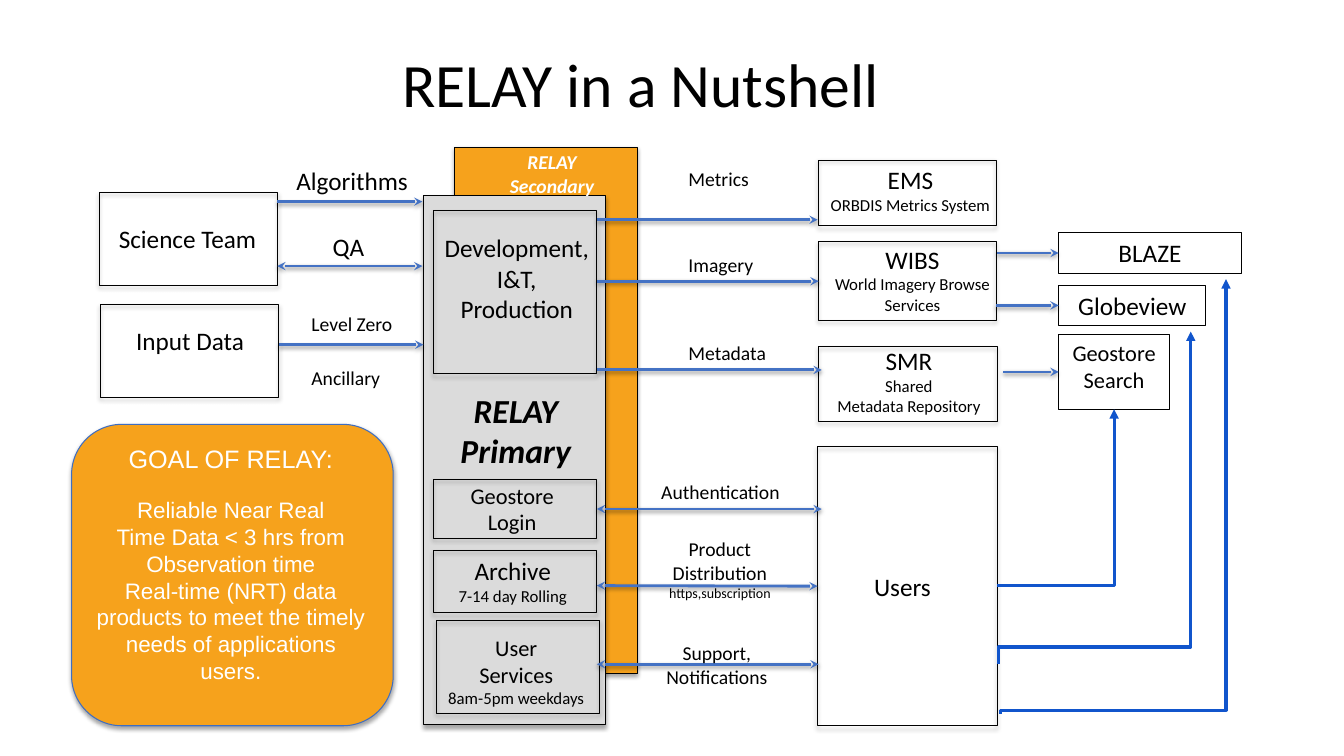
from dataclasses import dataclass

from lxml import etree
from pptx import Presentation
from pptx.dml.color import RGBColor
from pptx.enum import shapes, text
from pptx.oxml import ns
from pptx.util import Inches, Pt


@dataclass(frozen=True)
class Theme:
    ink: str = "000000"
    white: str = "FFFFFF"
    gold: str = "F6A21C"
    grey: str = "DBDBDB"
    rim: str = "3E6EC2"
    flow: str = "4472C4"
    route: str = "1155CC"
    font: str = "Calibri"
    plain: str = "Arial"
    title: int = 44
    head: int = 24
    big: int = 18
    mid: int = 16
    note: int = 14
    small: int = 12
    tiny: int = 10


theme = Theme()
rgb = RGBColor.from_string
LEFT, MID = text.PP_ALIGN.LEFT, text.PP_ALIGN.CENTER


def cast(item, alpha, gap):
    """Put a soft shadow straight below a shape or connector."""
    props = item.element.spPr
    effects = props.find(ns.qn("a:effectLst"))
    if effects is None:
        effects = etree.SubElement(props, ns.qn("a:effectLst"))
    shadow = etree.SubElement(effects, ns.qn("a:outerShdw"), blurRad=str(Pt(3.1)),
                              dist=str(Pt(gap)), dir="5400000", rotWithShape="0")
    tint = etree.SubElement(shadow, ns.qn("a:srgbClr"), val=theme.ink)
    etree.SubElement(tint, ns.qn("a:alpha"), val=str(alpha * 1000))


def write(frame, lines, align=MID, color=theme.ink, font=theme.font, strong=False):
    """Fill a frame with one paragraph per (wording, size) pair."""
    frame.vertical_anchor = text.MSO_ANCHOR.TOP
    for i, (words, size) in enumerate(lines):
        para = frame.add_paragraph() if i else frame.paragraphs[0]
        para.alignment = align
        run = para.add_run()
        run.text = words
        run.font.size, run.font.name = Pt(size), font
        run.font.color.rgb = rgb(color)
        run.font.bold = run.font.italic = strong


deck = Presentation()
deck.slide_width, deck.slide_height = Inches(13.33), Inches(7.5)
slide = deck.slides.add_slide(deck.slide_layouts[5])

title = slide.shapes.title
title.left, title.top = Inches(0.99), Inches(0.2)
title.width, title.height = Inches(9), Inches(1.25)
write(title.text_frame, [("RELAY in a Nutshell", theme.title)], LEFT)
title.text_frame.margin_left = Inches(3)
title.text_frame.vertical_anchor = text.MSO_ANCHOR.MIDDLE

# Boxes from back to front: place, fill
boxes = {
    "second": (4.51, 1.46, 1.81, 5.22, theme.gold),
    "team": (0.99, 1.91, 1.76, 0.92, None),
    "input": (1, 3.02, 1.76, 0.92, None),
    "users": (8.11, 4.43, 1.78, 2.77, None),
    "metrics": (8.12, 1.59, 1.76, 0.65, None),
    "images": (8.12, 2.4, 1.76, 0.78, None),
    "records": (8.12, 3.44, 1.77, 0.74, None),
    "prime": (4.2, 1.94, 1.81, 5.25, theme.grey),
    "build": (4.3, 2.09, 1.62, 1.62, None),
    "login": (4.3, 4.76, 1.62, 0.58, None),
    "archive": (4.3, 5.46, 1.62, 0.62, None),
    "support": (4.33, 6.16, 1.62, 0.92, None),
    "goal": (0.71, 4.21, 3.19, 2.99, theme.gold),
    "fires": (10.5, 2.31, 1.81, 0.4, None),
    "viewer": (10.5, 2.83, 1.46, 0.4, None),
    "search": (10.5, 3.32, 1.1, 0.74, None),
}
tools = {
    "fires": [("BLAZE", theme.big)],
    "viewer": [("Globeview", theme.big)],
    "search": [("Geostore Search", theme.mid)],
}
made = {}
for name, (*place, fill) in boxes.items():
    kind = shapes.MSO_SHAPE.ROUNDED_RECTANGLE if name == "goal" else shapes.MSO_SHAPE.RECTANGLE
    box = made[name] = slide.shapes.add_shape(kind, *map(Inches, place))
    box.shadow.inherit = False
    if fill:
        box.fill.solid()
        box.fill.fore_color.rgb = rgb(fill)
    else:
        box.fill.background()
    box.line.color.rgb = rgb(theme.rim if name == "goal" else theme.ink)
    box.line.width = Pt(0.75)
    if name in tools:
        write(box.text_frame, tools[name])
    else:
        cast(box, 35, 1.8)

# Straight flows: start, end, two-way, joined start, joined end
flows = [
    (2.75, 2, 4.19, 2, False, None, None),
    (2.75, 2.64, 4.19, 2.64, True, None, None),
    (2.77, 3.42, 4.2, 3.42, False, None, None),
    (5.92, 2.18, 8.11, 2.18, False, None, None),
    (5.92, 2.79, 8.12, 2.79, False, None, "images"),
    (5.92, 3.67, 8.15, 3.67, False, None, None),
    (5.92, 5.05, 8.15, 5.05, True, "login", None),
    (5.92, 5.81, 8.11, 5.81, True, None, "users"),
    (5.92, 6.59, 8.12, 6.59, True, None, None),
    (9.89, 2.51, 10.5, 2.51, False, None, "fires"),
    (9.88, 3.03, 10.5, 3.03, False, None, "viewer"),
    (9.95, 3.69, 10.5, 3.69, False, None, "search"),
]
for *ends, both, start, stop in flows:
    flow = slide.shapes.add_connector(shapes.MSO_CONNECTOR.STRAIGHT, *map(Inches, ends))
    if start:
        flow.begin_connect(made[start], 3)
    if stop:
        flow.end_connect(made[stop], 1)
    flow.line.color.rgb = rgb(theme.flow)
    flow.line.width = Pt(2)
    stroke = flow.element.spPr.find(ns.qn("a:ln"))
    for tip in ["headEnd", "tailEnd"] if both else ["tailEnd"]:
        etree.SubElement(stroke, ns.qn("a:" + tip), type="stealth")
    cast(flow, 38, 1.6)

# Bent routes from users to tools: start, end, share of the rise before the turn
routes = [
    (9.89, 5.81, 11.05, 4.06, None),
    (9.9, 6.59, 11.81, 3.29, 0.052),
    (9.92, 7.08, 12.16, 2.77, 0.008),
]
for x1, y1, x2, y2, turn in routes:
    ends = (x1, y1, x2, y2)
    if turn:
        # A rise-first elbow is a run-first one turned about its centre
        cx, cy = (x1 + x2) / 2, (y1 + y2) / 2
        dx, dy = (y1 - y2) / 2, (x2 - x1) / 2
        ends = (cx + dx, cy + dy, cx - dx, cy - dy)
    route = slide.shapes.add_connector(shapes.MSO_CONNECTOR.ELBOW, *map(Inches, ends))
    props = route.element.spPr
    shape = props.find(ns.qn("a:prstGeom"))
    if turn:
        props.find(ns.qn("a:xfrm")).set("rot", "5400000")
        guides = shape.find(ns.qn("a:avLst"))
        etree.SubElement(guides, ns.qn("a:gd"), name="adj1", fmla=f"val {round(turn * 100000)}")
    else:
        shape.set("prst", "bentConnector2")
    route.line.color.rgb = rgb(theme.route)
    route.line.width = Pt(2.25)
    etree.SubElement(props.find(ns.qn("a:ln")), ns.qn("a:tailEnd"), type="triangle")
    etree.SubElement(props, ns.qn("a:effectLst"))

big, mid, note, small = theme.big, theme.mid, theme.note, theme.small
pale = {"color": theme.white}
bold = {"strong": True}
left = {"align": LEFT}
# Labels: place, lines, style
labels = [
    (1.08, 2.17, 1.6, 0.4, [("Science Team", big)], left),
    (1.24, 3.18, 1.29, 0.4, [("Input Data", big)], {}),
    (2.84, 1.59, 1.32, 0.4, [("Algorithms", big)], left),
    (3.2, 2.25, 0.52, 0.4, [("QA", big)], left),
    (2.99, 3.05, 1.02, 0.34, [("Level Zero", note)], left),
    (2.99, 3.58, 0.89, 0.34, [("Ancillary", note)], left),
    (4.8, 1.44, 1.35, 0.29, [("RELAY Secondary", note)], pale | bold),
    (4.3, 2.26, 1.65, 1.01, [("Development,", big), ("I&T,", big), ("Production", big)], {}),
    (4.46, 3.82, 1.31, 0.91, [("RELAY", theme.head), ("Primary", theme.head)], bold),
    (4.53, 4.73, 1.1, 0.64, [("Geostore", mid), ("Login", mid)], {}),
    (4.44, 5.46, 1.29, 0.61, [("Archive", big), ("7-14 day Rolling", small)], {}),
    (4.33, 6.24, 1.58, 0.84,
     [("User", mid), ("Services", mid), ("8am-5pm weekdays", small)], {}),
    (6.73, 1.61, 0.81, 0.34, [("Metrics", note)], left),
    (6.73, 2.46, 0.85, 0.34, [("Imagery", note)], left),
    (6.73, 3.33, 0.98, 0.34, [("Metadata", note)], left),
    (6.46, 4.71, 1.39, 0.34, [("Authentication", note)], left),
    (6.43, 5.28, 1.42, 0.74,
     [("Product", note), ("Distribution", note), ("https,subscription", theme.tiny)], {}),
    (6.5, 6.31, 1.22, 0.57, [("Support,", note), ("Notifications", note)], {}),
    (8.11, 1.58, 1.84, 0.61, [("EMS", big), ("ORBDIS Metrics System", small)], {}),
    (8.14, 2.37, 1.82, 0.81,
     [("WIBS", big), ("World Imagery Browse", small), ("Services", small)], {}),
    (8.17, 3.38, 1.69, 0.81,
     [("SMR", big), ("Shared", small), ("Metadata Repository", small)], {}),
    (8.57, 5.62, 0.78, 0.4, [("Users", big)], left),
    (0.86, 4.35, 2.86, 1.87,
     [("GOAL OF RELAY:", big), ("Reliable Near Real", mid), ("Time Data < 3 hrs from", mid),
      ("Observation time", mid),
      ("Real-time (NRT) data products to meet the timely needs of applications users.", mid)],
     pale | {"font": theme.plain}),
]
for *place, lines, style in labels:
    frame = slide.shapes.add_textbox(*map(Inches, place)).text_frame
    frame.word_wrap = style is not left
    write(frame, lines, **style)
frame.paragraphs[1].space_before = Pt(16)

deck.save("out.pptx")
